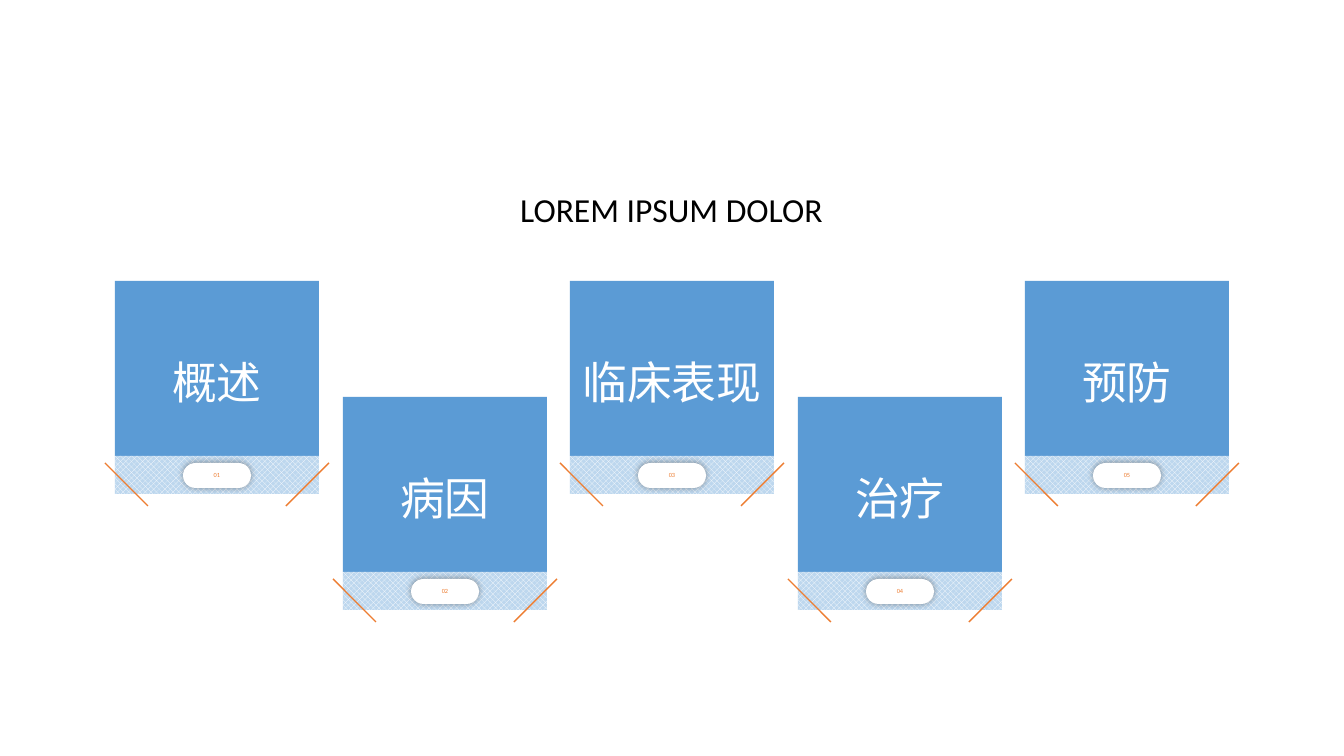
from dataclasses import dataclass

from lxml.etree import SubElement
from pptx import Presentation
from pptx.dml.color import RGBColor
from pptx.enum.dml import MSO_PATTERN
from pptx.enum.shapes import MSO_CONNECTOR as CONNECTOR, MSO_SHAPE as SHAPE
from pptx.enum.text import MSO_ANCHOR as ANCHOR, PP_ALIGN as ALIGN
from pptx.oxml.ns import qn
from pptx.util import Emu, Pt

FONT = "Calibri"
WHITE, BLACK, BLUE, ORANGE = "FFFFFF", "000000", "5B9BD5", "ED7D31"
BAND_DIAMONDS, BAND_BACK = "FEFFFF", "BDD7EE"
PAGE_WIDTH, PAGE_HEIGHT = 1344, 756

# Card layout: columns are half of COLUMN_PAIR apart, every second one lower
FIRST_LEFT, COLUMN_PAIR = 115, 455
UPPER_TOP, LOWER_TOP = 281, 397
CARD_WIDTH, TILE_HEIGHT, BAND_HEIGHT = 204, 175, 38
BADGE_WIDTH, BADGE_HEIGHT, BADGE_DROP = 68, 25, 182
SLASH_SIZE, SLASH_OVERHANG = 43, 10


@dataclass(frozen=True)
class Area:
    left: int
    top: int
    width: int
    height: int


@dataclass(frozen=True)
class Label:
    text: str
    size: float
    color: str
    line_spacing: float = 1.0


@dataclass(frozen=True)
class Card:
    index: int
    title: str

    @property
    def left(self) -> int:
        return FIRST_LEFT + (COLUMN_PAIR * self.index + 1) // 2

    @property
    def top(self) -> int:
        return LOWER_TOP if self.index % 2 else UPPER_TOP


CARDS = [Card(index, title) for index, title in
         enumerate(["概述", "病因", "临床表现", "治疗", "预防"])]


def px(length: int) -> Emu:
    return Emu(round(length * 914400 / 100.8))


def rgb(color: str) -> RGBColor:
    return RGBColor.from_string(color)


def bounds(area: Area) -> tuple:
    return px(area.left), px(area.top), px(area.width), px(area.height)


def write(shape, label: Label) -> None:
    frame = shape.text_frame
    frame_format = {"word_wrap": True, "vertical_anchor": ANCHOR.MIDDLE,
                    "margin_left": 0, "margin_right": 0,
                    "margin_top": 0, "margin_bottom": 0}
    for name, value in frame_format.items():
        setattr(frame, name, value)
    para = frame.paragraphs[0]
    para_format = {"alignment": ALIGN.CENTER, "line_spacing": label.line_spacing}
    for name, value in para_format.items():
        setattr(para, name, value)
    span = para.add_run()
    span.text = label.text
    for name, value in {"name": FONT, "size": Pt(label.size)}.items():
        setattr(span.font, name, value)
    span.font.color.rgb = rgb(label.color)


def add_box(shapes, kind: SHAPE, area: Area, color: str):
    box = shapes.add_shape(kind, *bounds(area))
    box.shadow.inherit = False
    box.fill.solid()
    box.fill.fore_color.rgb = rgb(color)
    box.line.fill.background()
    return box


def add_glow(box) -> None:
    effects = box._element.spPr.find(qn("a:effectLst"))
    shadow = SubElement(effects, qn("a:outerShdw"), blurRad=str(Pt(5)),
                        dist="0", dir="0", algn="ctr", rotWithShape="0")
    shade = SubElement(shadow, qn("a:srgbClr"), val=BLACK)
    SubElement(shade, qn("a:alpha"), val="40000")


def add_slash(shapes, start: tuple, end: tuple) -> None:
    slash = shapes.add_connector(CONNECTOR.STRAIGHT, *map(px, start + end))
    slash.line.color.rgb = rgb(ORANGE)
    slash.line.width = Pt(1)
    SubElement(slash._element.spPr, qn("a:effectLst"))


def add_card(page, card: Card) -> None:
    shapes = page.shapes.add_group_shape().shapes

    # Title tile
    tile = add_box(shapes, SHAPE.RECTANGLE,
                   Area(card.left, card.top, CARD_WIDTH, TILE_HEIGHT), BLUE)
    write(tile, Label(card.title, 32, WHITE, 1.5))

    # Patterned band
    band = add_box(shapes, SHAPE.RECTANGLE,
                   Area(card.left, card.top + TILE_HEIGHT, CARD_WIDTH, BAND_HEIGHT),
                   BAND_BACK)
    band.fill.patterned()
    band.fill.pattern = MSO_PATTERN.OUTLINED_DIAMOND
    band.fill.fore_color.rgb = rgb(BAND_DIAMONDS)
    band.fill.back_color.rgb = rgb(BAND_BACK)

    # Number badge
    upper = card.top + BADGE_DROP
    badge_left = card.left + (CARD_WIDTH - BADGE_WIDTH) // 2
    badge = add_box(shapes, SHAPE.ROUNDED_RECTANGLE,
                    Area(badge_left, upper, BADGE_WIDTH, BADGE_HEIGHT), WHITE)
    badge.adjustments[0] = 0.5
    add_glow(badge)
    write(badge, Label(f"{card.index + 1:02}", 4.5, ORANGE))

    # Corner slashes
    lower = upper + SLASH_SIZE
    outer_left = card.left - SLASH_OVERHANG
    outer_right = card.left + CARD_WIDTH + SLASH_OVERHANG
    add_slash(shapes, (outer_left, upper), (outer_left + SLASH_SIZE, lower))
    add_slash(shapes, (outer_right - SLASH_SIZE, lower), (outer_right, upper))


def main() -> None:
    deck = Presentation()
    deck.slide_width, deck.slide_height = px(PAGE_WIDTH), px(PAGE_HEIGHT)
    page = deck.slides.add_slide(deck.slide_layouts[6])

    # Heading
    heading = page.shapes.add_textbox(*bounds(Area(428, 163, 487, 72)))
    write(heading, Label("LOREM IPSUM DOLOR", 24, BLACK, 1.5))

    for card in CARDS:
        add_card(page, card)
    deck.save("out.pptx")


if __name__ == "__main__":
    main()
